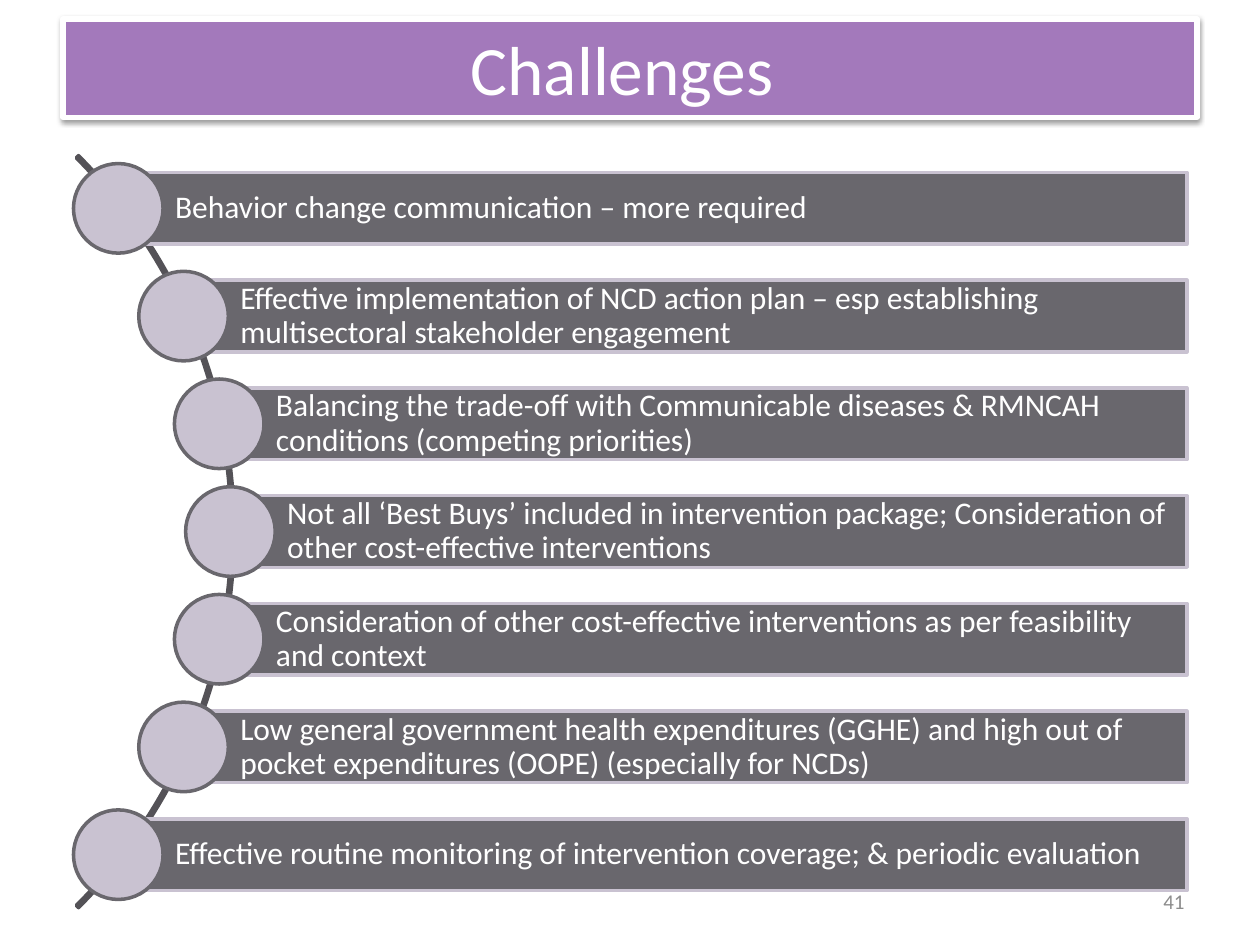
from lxml import etree
from pptx import Presentation
from pptx.dml.color import RGBColor
from pptx.enum.shapes import MSO_SHAPE
from pptx.enum.text import MSO_ANCHOR, PP_ALIGN
from pptx.oxml.ns import qn
from pptx.util import Pt

RECT, OVAL, ARC = MSO_SHAPE.RECTANGLE, MSO_SHAPE.OVAL, MSO_SHAPE.BLOCK_ARC
LEFT, CENTER, RIGHT = PP_ALIGN.LEFT, PP_ALIGN.CENTER, PP_ALIGN.RIGHT
COLORS = {
    "title": "A379BB", "white": "FFFFFF", "bar": "69676D",
    "node": "C9C2D1", "arc": "545257", "number": "8C8C8C", "shadow": "000000",
}
CHALLENGES = [
    "Behavior change communication – more required",
    "Effective implementation of NCD action plan – esp establishing "
    "multisectoral stakeholder engagement",
    "Balancing the trade-off with Communicable diseases & RMNCAH "
    "conditions (competing priorities)",
    "Not all ‘Best Buys’ included in intervention package; "
    "Consideration of other cost-effective interventions",
    "Consideration of other cost-effective interventions as per "
    "feasibility and context",
    "Low general government health expenditures (GGHE) and high out of "
    "pocket expenditures (OOPE) (especially for NCDs)",
    "Effective routine monitoring of intervention coverage; "
    "& periodic evaluation",
]


def add_outlined(kind, left, top, width, height, fill, line, weight):
    shape = slide.shapes.add_shape(kind, Pt(left), Pt(top), Pt(width), Pt(height))
    shape.shadow.inherit = False
    if fill:
        shape.fill.solid()
        shape.fill.fore_color.rgb = RGBColor.from_string(COLORS[fill])
    else:
        shape.fill.background()
    shape.line.color.rgb = RGBColor.from_string(COLORS[line])
    shape.line.width = Pt(weight)
    return shape


def write(shape, text, size, color, align, frame_format):
    """Fill the shape with one vertically centred paragraph."""
    frame = shape.text_frame
    frame_format = {"word_wrap": True, "vertical_anchor": MSO_ANCHOR.MIDDLE, **frame_format}
    for name, value in frame_format.items():
        setattr(frame, name, value)
    paragraph = frame.paragraphs[0]
    paragraph.alignment = align
    run = paragraph.add_run()
    run.text = text
    run.font.name = "Calibri"
    run.font.size = Pt(size)
    run.font.color.rgb = RGBColor.from_string(COLORS[color])
    return paragraph


prs = Presentation()
prs.slide_width, prs.slide_height = Pt(720), Pt(540)
slide = prs.slides.add_slide(prs.slide_layouts[6])

# Arc that carries the nodes: a thin ring from -45 to 45 degrees
arc = add_outlined(ARC, -473.8, 0, 607.7, 607.7, None, "arc", 2)
for index, value in enumerate((189, 27, 0.003)):
    arc.adjustments[index] = value

# Challenges, mirrored about the middle row
BAR_RIGHT, BAR_HEIGHT, NODE_SIZE = 678.2, 41, 51.2
FIRST_MIDDLE, ROW_PITCH = 119.1, 61.55
upper_lefts = [67.6, 104.9, 125.3, 131.7]
bar_lefts = upper_lefts + upper_lefts[-2::-1]
bar_format = {"margin_left": Pt(32.4), "margin_right": Pt(3.6)}

for row, (challenge, left) in enumerate(zip(CHALLENGES, bar_lefts)):
    middle = FIRST_MIDDLE + row * ROW_PITCH
    bar = add_outlined(RECT, left, middle - BAR_HEIGHT / 2, BAR_RIGHT - left,
                       BAR_HEIGHT, "bar", "node", 2)
    write(bar, challenge, 18, "white", LEFT, bar_format).line_spacing = 0.9
    add_outlined(OVAL, left - NODE_SIZE / 2, middle - NODE_SIZE / 2,
                 NODE_SIZE, NODE_SIZE, "node", "bar", 2)

# Slide number
number = slide.shapes.add_textbox(Pt(516), Pt(500.5), Pt(168), Pt(28.8))
write(number, "41", 12, "number", RIGHT, {})

# Title band with a soft shadow below
title = add_outlined(RECT, 36, 10.8, 648, 56.2, "title", "white", 3)
write(title, "Challenges ", 39.6, "white", CENTER, {})
effects = title._element.spPr.find(qn("a:effectLst"))
shadow = etree.SubElement(effects, qn("a:outerShdw"), blurRad=str(Pt(3.1)),
                          dist=str(Pt(1.6)), dir="5400000", rotWithShape="0")
shadow_color = etree.SubElement(shadow, qn("a:srgbClr"), val=COLORS["shadow"])
etree.SubElement(shadow_color, qn("a:alpha"), val="38000")

prs.save("out.pptx")
